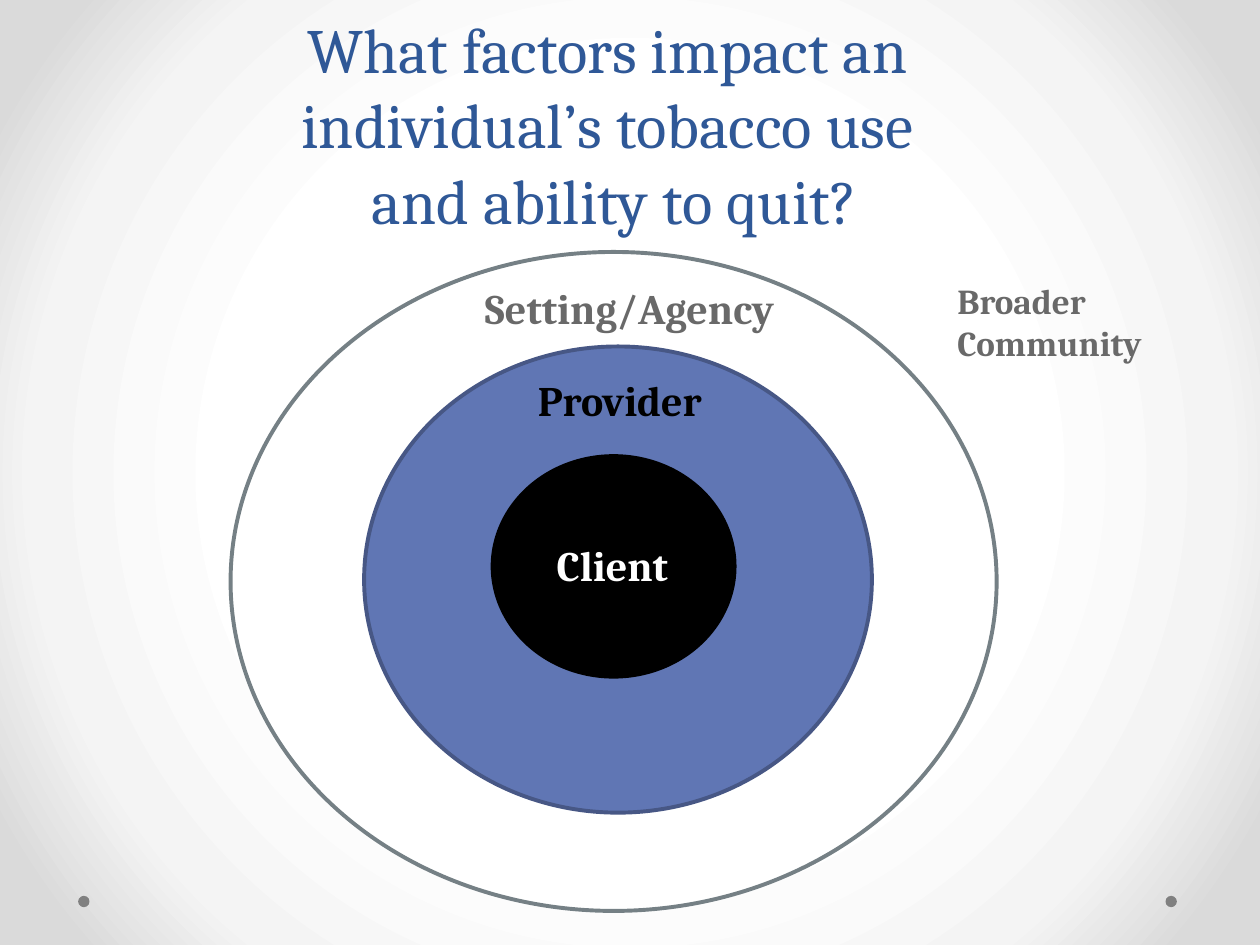
from dataclasses import dataclass

from pptx import Presentation, oxml
from pptx.dml.color import RGBColor
from pptx.enum import shapes, text
from pptx.oxml import ns
from pptx.util import Inches, Pt


@dataclass(frozen=True)
class Theme:
    """Colours, font and type sizes of the slide."""
    font: str = "Cambria"
    title: str = "2F5897"
    blue: str = "6076B4"
    edge: str = "475785"
    rim: str = "758085"
    gray: str = "696969"
    dot: str = "808080"
    black: str = "000000"
    white: str = "FFFFFF"
    glow: tuple = ((50, "FFFFFF"), (76, "F4F4F4"), (92, "DADADA"))
    big: int = 36
    mid: int = 24
    small: int = 20
    line: float = 2.25


THEME = Theme()


def place(box):
    """Turn a box in inches into lengths."""
    return [Inches(side) for side in box]


def style(frame, size, color, bold=True, align=text.PP_ALIGN.LEFT):
    """Format every run of a text frame."""
    frame.word_wrap = True
    for para in frame.paragraphs:
        para.alignment = align
        for run in para.runs:
            run.font.name = THEME.font
            run.font.size = Pt(size)
            run.font.bold = bold
            run.font.color.rgb = RGBColor.from_string(color)


def backdrop(slide):
    """Fill the background with a round gradient."""
    slide.background.fill.solid()
    stops = "".join(
        f'<a:gs pos="{pos * 1000}"><a:srgbClr val="{color}"/></a:gs>'
        for pos, color in THEME.glow)
    grad = oxml.parse_xml(
        f'<a:gradFill {ns.nsdecls("a")} rotWithShape="1"><a:gsLst>{stops}</a:gsLst>'
        '<a:path path="circle"><a:fillToRect l="50000" t="50000" r="50000" b="50000"/>'
        '</a:path></a:gradFill>')
    solid = next(slide.element.iter(ns.qn("a:solidFill")))
    solid.getparent().replace(solid, grad)


def oval(slide, box, fill, line=None):
    """Draw one ellipse, with an outline if a colour is given."""
    shape = slide.shapes.add_shape(shapes.MSO_SHAPE.OVAL, *place(box))
    shape.shadow.inherit = False
    shape.fill.solid()
    shape.fill.fore_color.rgb = RGBColor.from_string(fill)
    if line:
        shape.line.color.rgb = RGBColor.from_string(line)
        shape.line.width = Pt(THEME.line)
    else:
        shape.line.fill.background()


def label(slide, box, words, size, color):
    """Write one bold label."""
    frame = slide.shapes.add_textbox(*place(box)).text_frame
    frame.text = words
    style(frame, size, color)


def heading(slide, box, words):
    """Move and format the title."""
    title = slide.shapes.title
    title.left, title.top, title.width, title.height = place(box)
    frame = title.text_frame
    frame.text = words
    frame.auto_size = text.MSO_AUTO_SIZE.NONE
    frame.vertical_anchor = text.MSO_ANCHOR.TOP
    style(frame, THEME.big, THEME.title, False, text.PP_ALIGN.CENTER)


def dots(slide, box):
    """Put a small dot at each end of the box."""
    left, top, width, size = box
    for x in (left, left + width - size):
        oval(slide, (x, top, size, size), THEME.dot)


def rings(slide, box):
    """Draw the nested levels and their labels within the box."""
    left, top, width, height = box
    levels = (
        ((0, 0, width, height), THEME.white, THEME.rim),
        ((1.06, 0.75, 4.03, 3.7), THEME.blue, THEME.edge),
        ((2.08, 1.62, 1.92, 1.75), THEME.black, THEME.black),
    )
    names = (
        ((2.49, 2.23, 1.17, 0.5), "Client", THEME.mid, THEME.white),
        ((2.34, 0.92, 1.67, 0.5), "Provider", THEME.mid, THEME.black),
        ((1.92, 0.19, 2.83, 0.5), "Setting/Agency", THEME.mid, THEME.gray),
        ((5.67, 0.17, 2.17, 0.77), "Broader Community", THEME.small, THEME.gray),
    )
    for draw, parts in ((oval, levels), (label, names)):
        for (x, y, w, h), *look in parts:
            draw(slide, (left + x, top + y, w, h), *look)


def main():
    """Build and save the slide."""
    deck = Presentation()
    deck.slide_width, deck.slide_height = Inches(10), Inches(7.5)
    slide = deck.slides.add_slide(deck.slide_layouts[5])
    backdrop(slide)
    dots(slide, (0.62, 7.11, 8.72, 0.09))
    rings(slide, (1.83, 2, 6.08, 5.23))
    heading(slide, (0.29, 0.03, 9.17, 1.92),
            "What factors impact an \nindividual’s tobacco use \vand ability to quit?")
    deck.save("out.pptx")


if __name__ == "__main__":
    main()
